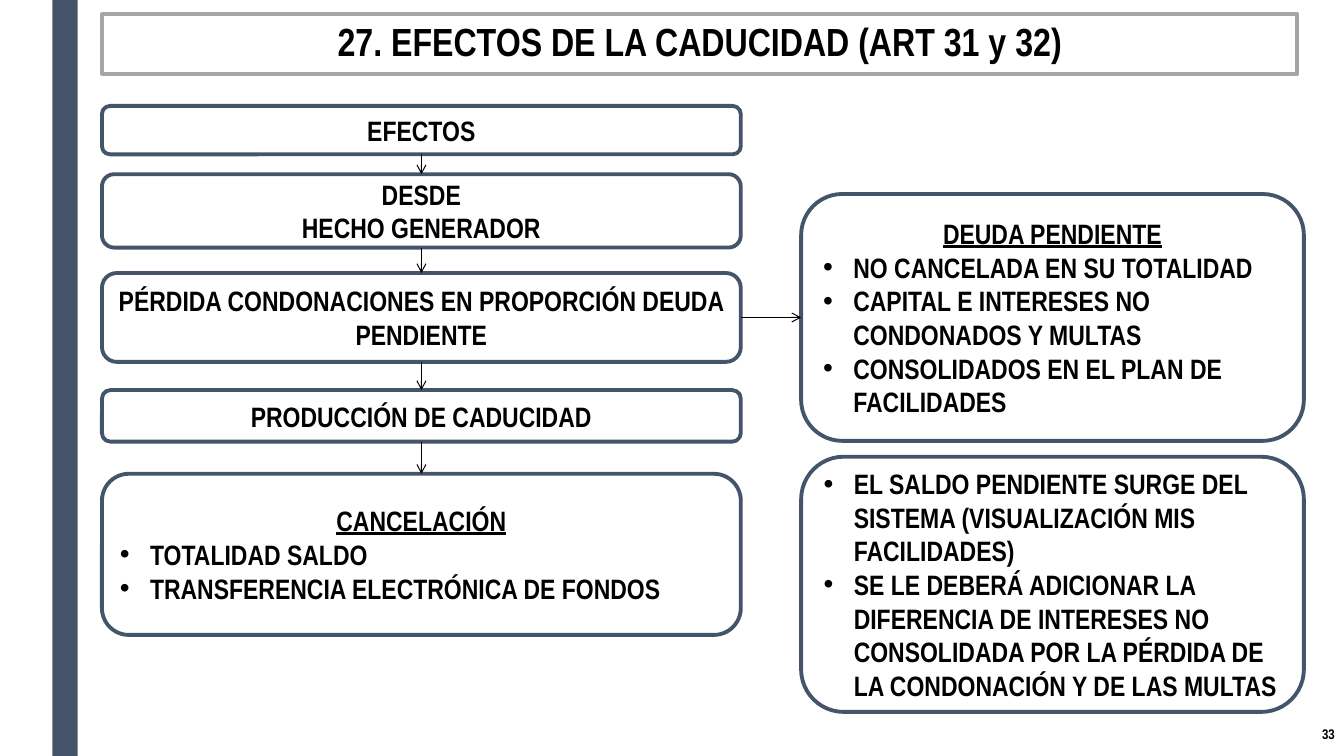
from dataclasses import dataclass
from itertools import pairwise

from lxml import etree
from pptx import Presentation
from pptx.dml.color import RGBColor
from pptx.enum.shapes import MSO_CONNECTOR, MSO_SHAPE
from pptx.enum.text import MSO_ANCHOR, MSO_AUTO_SIZE, PP_ALIGN
from pptx.oxml.ns import qn
from pptx.util import Cm, Pt

STRAIGHT = MSO_CONNECTOR.STRAIGHT
RECTANGLE, ROUNDED = MSO_SHAPE.RECTANGLE, MSO_SHAPE.ROUNDED_RECTANGLE
MIDDLE = MSO_ANCHOR.MIDDLE
NO_FIT = MSO_AUTO_SIZE.NONE
LEFT, CENTER, RIGHT = PP_ALIGN.LEFT, PP_ALIGN.CENTER, PP_ALIGN.RIGHT
TOP_SITE, LEFT_SITE, BOTTOM_SITE, RIGHT_SITE = range(4)
COMPARISON_LAYOUT = 4


@dataclass(frozen=True)
class Theme:
    font: str = "Arial Narrow"
    ink: RGBColor = RGBColor(0x00, 0x00, 0x00)
    paper: RGBColor = RGBColor(0xFF, 0xFF, 0xFF)
    slate: RGBColor = RGBColor(0x44, 0x54, 0x6A)
    gray: RGBColor = RGBColor(0xA5, 0xA5, 0xA5)
    title_size: float = 28
    body_size: float = 20
    number_size: float = 10
    border: float = 2.75
    arrow: float = 0.75


@dataclass(frozen=True)
class Frame:
    left: float
    top: float
    width: float
    height: float


@dataclass(frozen=True)
class Step:
    frame: Frame
    lines: tuple[str, ...]


@dataclass(frozen=True)
class ListBox:
    placeholder: int
    frame: Frame
    heading: str
    items: tuple[str, ...]


THEME = Theme()
FLOW_LEFT, FLOW_WIDTH = 2.57, 16.1
DETAIL_LEFT, DETAIL_WIDTH = 20.19, 12.67

STEPS = (
    Step(Frame(FLOW_LEFT, 2.67, FLOW_WIDTH, 1.22), ("EFECTOS",)),
    Step(Frame(FLOW_LEFT, 4.39, FLOW_WIDTH, 1.85), ("DESDE", "HECHO GENERADOR")),
    Step(Frame(FLOW_LEFT, 6.88, FLOW_WIDTH, 2.24),
         ("PÉRDIDA CONDONACIONES EN PROPORCIÓN DEUDA PENDIENTE",)),
    Step(Frame(FLOW_LEFT, 9.83, FLOW_WIDTH, 1.3), ("PRODUCCIÓN DE CADUCIDAD",)),
)
CANCELLATION = ListBox(
    1, Frame(FLOW_LEFT, 11.94, FLOW_WIDTH, 4.06), "CANCELACIÓN",
    ("TOTALIDAD SALDO", "TRANSFERENCIA ELECTRÓNICA DE FONDOS"))
PENDING_DEBT = ListBox(
    2, Frame(DETAIL_LEFT, 4.89, DETAIL_WIDTH, 6.22), "DEUDA PENDIENTE",
    ("NO CANCELADA EN SU TOTALIDAD",
     "CAPITAL E INTERESES NO CONDONADOS Y MULTAS",
     "CONSOLIDADOS EN EL PLAN DE FACILIDADES"))
BALANCE = ListBox(
    4, Frame(DETAIL_LEFT, 11.51, DETAIL_WIDTH, 6.43), "",
    ("EL SALDO PENDIENTE SURGE DEL SISTEMA (VISUALIZACIÓN MIS FACILIDADES)",
     "SE LE DEBERÁ ADICIONAR LA DIFERENCIA DE INTERESES NO CONSOLIDADA "
     "POR LA PÉRDIDA DE LA CONDONACIÓN Y DE LAS MULTAS"))


def apply(target, values: dict) -> None:
    for name, value in values.items():
        setattr(target, name, value)


def bounds(frame: Frame) -> tuple:
    return Cm(frame.left), Cm(frame.top), Cm(frame.width), Cm(frame.height)


def place(shape, frame: Frame) -> None:
    apply(shape, dict(zip(("left", "top", "width", "height"), bounds(frame))))


def paint(shape, border: RGBColor) -> None:
    shape.fill.solid()
    shape.fill.fore_color.rgb = THEME.paper
    shape.line.color.rgb = border
    shape.line.width = Pt(THEME.border)
    shape.shadow.inherit = False


def write(shape, lines: tuple[str, ...], size: float, alignment=CENTER,
          line_spacing: float = 1.0) -> None:
    frame = shape.text_frame
    frame.text = "\n".join(lines)
    apply(frame, {"word_wrap": True, "auto_size": NO_FIT, "vertical_anchor": MIDDLE})
    for paragraph in frame.paragraphs:
        apply(paragraph, {"alignment": alignment, "line_spacing": line_spacing,
                          "space_before": Pt(0), "space_after": Pt(0)})
        font = paragraph.runs[0].font
        apply(font, {"name": THEME.font, "size": Pt(size), "bold": True})
        font.color.rgb = THEME.ink


def set_bullet(paragraph, bulleted: bool) -> None:
    properties = paragraph._p.get_or_add_pPr()
    hanging = Cm(0.76) if bulleted else 0
    properties.set("marL", str(hanging))
    properties.set("indent", str(-hanging))
    if bulleted:
        etree.SubElement(properties, qn("a:buFont"), typeface="Arial")
        etree.SubElement(properties, qn("a:buChar"), char="•")
    else:
        etree.SubElement(properties, qn("a:buNone"))


def round_corners(shape) -> None:
    geometry = etree.Element(qn("a:prstGeom"), prst="roundRect")
    etree.SubElement(geometry, qn("a:avLst"))
    shape._element.spPr.insert(1, geometry)


def add_step(slide, step: Step):
    shape = slide.shapes.add_shape(ROUNDED, *bounds(step.frame))
    paint(shape, THEME.slate)
    write(shape, step.lines, THEME.body_size)
    return shape


def fill_list(slide, box: ListBox):
    shape = slide.placeholders[box.placeholder]
    place(shape, box.frame)
    round_corners(shape)
    paint(shape, THEME.slate)
    headings = (box.heading,) if box.heading else ()
    write(shape, headings + box.items, THEME.body_size, LEFT)
    for index, paragraph in enumerate(shape.text_frame.paragraphs):
        is_heading = index < len(headings)
        set_bullet(paragraph, not is_heading)
        if is_heading:
            paragraph.alignment = CENTER
            paragraph.runs[0].font.underline = True
    return shape


def add_arrow(slide, source, source_site: int, target, target_site: int) -> None:
    connector = slide.shapes.add_connector(STRAIGHT, 0, 0, 0, 0)
    connector.begin_connect(source, source_site)
    connector.end_connect(target, target_site)
    connector.line.color.rgb = THEME.ink
    connector.line.width = Pt(THEME.arrow)
    etree.SubElement(connector.line._get_or_add_ln(), qn("a:tailEnd"), type="arrow")
    etree.SubElement(connector._element.spPr, qn("a:effectLst"))


def main() -> None:
    presentation = Presentation()
    apply(presentation, {"slide_width": Cm(33.87), "slide_height": Cm(19.05)})
    slide = presentation.slides.add_slide(presentation.slide_layouts[COMPARISON_LAYOUT])

    rail = slide.shapes.add_shape(RECTANGLE, *bounds(Frame(1.32, 0, 0.64, 19.05)))
    rail.fill.solid()
    rail.fill.fore_color.rgb = THEME.slate
    rail.line.fill.background()
    rail.shadow.inherit = False

    title = slide.shapes.title
    place(title, Frame(FLOW_LEFT, 0.36, 30.12, 1.5))
    paint(title, THEME.gray)
    write(title, ("27. EFECTOS DE LA CADUCIDAD (ART 31 y 32)",), THEME.title_size,
          line_spacing=0.89)

    number = slide.shapes.add_textbox(*bounds(Frame(29.44, 17.93, 4.45, 1.12)))
    write(number, ("33",), THEME.number_size, RIGHT)

    flow = [add_step(slide, step) for step in STEPS]
    loss = flow[2]
    flow.append(fill_list(slide, CANCELLATION))
    pending_debt = fill_list(slide, PENDING_DEBT)
    fill_list(slide, BALANCE)

    for source, target in pairwise(flow):
        add_arrow(slide, source, BOTTOM_SITE, target, TOP_SITE)
    add_arrow(slide, loss, RIGHT_SITE, pending_debt, LEFT_SITE)

    for placeholder in list(slide.placeholders):
        if not placeholder.text_frame.text:
            placeholder._element.getparent().remove(placeholder._element)
    presentation.save("out.pptx")


if __name__ == "__main__":
    main()
